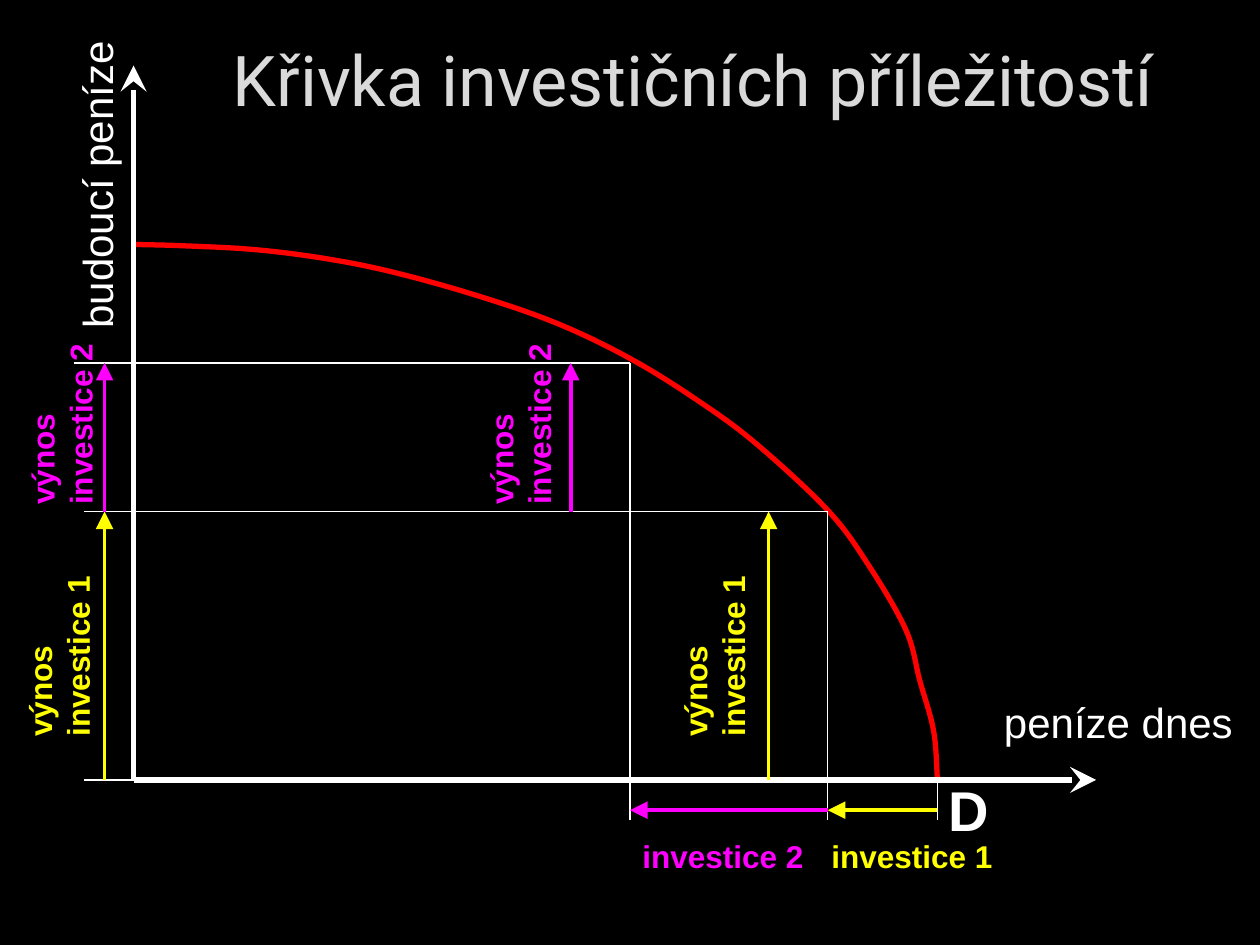
from collections import namedtuple

from lxml import etree
from pptx import Presentation
from pptx.dml.color import RGBColor
from pptx.enum import shapes, text
from pptx.oxml import ns
from pptx.util import Inches, Pt

BLACK = RGBColor(0x00, 0x00, 0x00)
WHITE = RGBColor(0xFF, 0xFF, 0xFF)
SILVER = RGBColor(0xDA, 0xDA, 0xDA)
RED = RGBColor(0xFF, 0x00, 0x00)
YELLOW = RGBColor(0xFF, 0xFF, 0x00)
MAGENTA = RGBColor(0xFF, 0x00, 0xFF)

Box = namedtuple("Box", "left top width height")
Investment = namedtuple(
    "Investment",
    "number color start end base top arrow_x guide_x label_x return_xs return_y")

# Distances in inches from the origin of the axes, upwards and to the right
D_X = 6.38
TICK_Y = -0.32
INVESTMENTS = [
    Investment(1, YELLOW, D_X, 5.51, 0, 2.13, 5.04, -0.39, 5.44, (-1.34, 3.86), 1.34),
    Investment(2, MAGENTA, 5.51, 3.94, 2.13, 3.31, 3.47, -0.47, 3.94, (-1.32, 2.32), 3.18),
]
CURVE = [
    (6.38, 0), (6.35, 0.39), (6.24, 0.79), (6.13, 1.19), (5.83, 1.71),
    (5.51, 2.14), (4.94, 2.67), (4.48, 3.01), (3.95, 3.34), (3.37, 3.62),
    (2.74, 3.84), (2.06, 4.03), (1.51, 4.14), (0.95, 4.21), (0.38, 4.24),
    (0, 4.25),
]


def place(box, x, y):
    """Turn a point measured from the origin of the axes into slide lengths."""
    return Inches(box.left + x), Inches(box.top + box.height - y)


def format_text(frame, words, size=18, color=WHITE, font="Arial", bold=False,
                align=None):
    frame.text = words
    paragraph = frame.paragraphs[0]
    paragraph.alignment = align
    run_font = paragraph.runs[0].font
    run_font.name, run_font.size, run_font.bold = font, Pt(size), bold
    run_font.color.rgb = color


def add_label(slide, box, x, y, width, height, words, rotation=0, wrap=True,
              **style):
    shape = slide.shapes.add_textbox(
        *place(box, x, y), Inches(width), Inches(height))
    shape.rotation = rotation
    shape.text_frame.word_wrap = wrap
    shape.text_frame.auto_size = text.MSO_AUTO_SIZE.SHAPE_TO_FIT_TEXT
    format_text(shape.text_frame, words, **style)


def add_line(slide, box, start, end, color=WHITE, width=0.75, head=None):
    connector = slide.shapes.add_connector(
        shapes.MSO_CONNECTOR.STRAIGHT, *place(box, *start), *place(box, *end))
    connector.line.color.rgb = color
    connector.line.width = Pt(width)
    if head:
        outline = connector.line._get_or_add_ln()
        etree.SubElement(outline, ns.qn("a:tailEnd"), type=head, w="lg", len="lg")
    etree.SubElement(connector._element.spPr, ns.qn("a:effectLst"))


def round_corners(shape):
    """Turn the straight segments of a freeform into smooth Bézier segments."""
    segments = shape._element.findall(".//" + ns.qn("a:lnTo"))
    ends = shape._element.findall(".//" + ns.qn("a:pt"))
    points = [(int(end.get("x")), int(end.get("y"))) for end in ends]
    padded = [points[0], *points, points[-1]]
    for i, segment in enumerate(segments):
        before, start, end, after = padded[i:i + 4]
        leaving = [b + (c - a) / 6 for a, b, c in zip(before, start, end)]
        arriving = [c - (d - b) / 6 for b, c, d in zip(start, end, after)]
        bezier = etree.Element(ns.qn("a:cubicBezTo"))
        for x, y in (leaving, arriving, end):
            etree.SubElement(bezier, ns.qn("a:pt"), x=str(round(x)), y=str(round(y)))
        segment.getparent().replace(segment, bezier)


def add_curve(slide, box):
    start, *rest = [place(box, *point) for point in CURVE]
    builder = slide.shapes.build_freeform(*start)
    builder.add_line_segments(rest, close=False)
    curve = builder.convert_to_shape()
    round_corners(curve)
    curve.shadow.inherit = False
    curve.fill.background()
    curve.line.color.rgb = RED
    curve.line.width = Pt(3)


def add_axes(slide, box):
    for end in ((box.width, 0), (0, box.height)):
        add_line(slide, box, (0, 0), end, width=3, head="stealth")
    add_line(slide, box, (0, 0), (-0.39, 0))
    add_line(slide, box, (D_X, 0), (D_X, TICK_Y))
    add_label(slide, box, 6.81, 0.71, 2.13, 0.5, "peníze dnes", size=24)
    add_label(slide, box, -1.65, 5.09, 2.71, 0.5, "budoucí peníze",
              size=24, rotation=270)
    add_label(slide, box, 6.37, 0.08, 0.47, 0.63, "D", size=32, bold=True,
              wrap=False)


def add_investment(slide, box, item):
    """Draw guides, the investment arrow, two return arrows and their labels."""
    corner = (item.end, item.top)
    add_line(slide, box, (item.end, TICK_Y), corner)
    add_line(slide, box, corner, (item.guide_x, item.top))

    arrow = dict(color=item.color, width=2, head="triangle")
    add_line(slide, box, (item.start, -0.24), (item.end, -0.24), **arrow)
    for x in (-0.23, item.arrow_x):
        add_line(slide, box, (x, item.base), (x, item.top), **arrow)

    name = f"investice {item.number}"
    style = dict(color=item.color, bold=True)
    add_label(slide, box, item.label_x, -0.4, 1.65, 0.4, name, **style)
    for x in item.return_xs:
        add_label(slide, box, x, item.return_y, 1.49, 0.7, f"výnos {name}",
                  rotation=270, **style)


def add_title(slide, box):
    title = slide.shapes.title
    title.left, title.top, title.width, title.height = map(Inches, box)
    title.text_frame.vertical_anchor = text.MSO_ANCHOR.MIDDLE
    format_text(title.text_frame, "Křivka investičních příležitostí", size=40,
                color=SILVER, font="Roboto", align=text.PP_ALIGN.CENTER)


def main():
    presentation = Presentation()
    presentation.slide_width = Inches(10)
    presentation.slide_height = Inches(7.5)
    slide = presentation.slides.add_slide(presentation.slide_layouts[5])
    slide.background.fill.solid()
    slide.background.fill.fore_color.rgb = BLACK

    plot = Box(1.06, 0.52, 7.64, 5.67)
    add_title(slide, Box(1, 0, 9, 1.25))
    add_curve(slide, plot)
    add_axes(slide, plot)
    for item in INVESTMENTS:
        add_investment(slide, plot, item)
    presentation.save("out.pptx")


if __name__ == "__main__":
    main()
